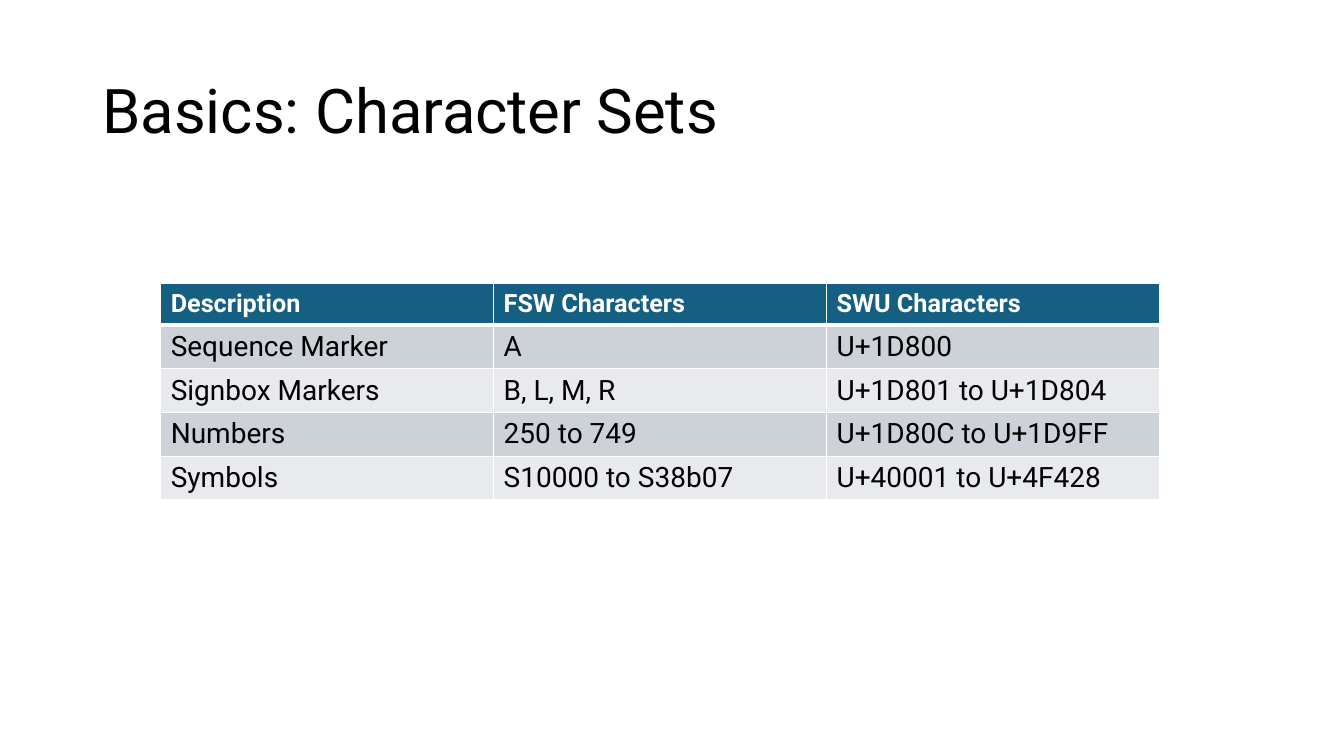
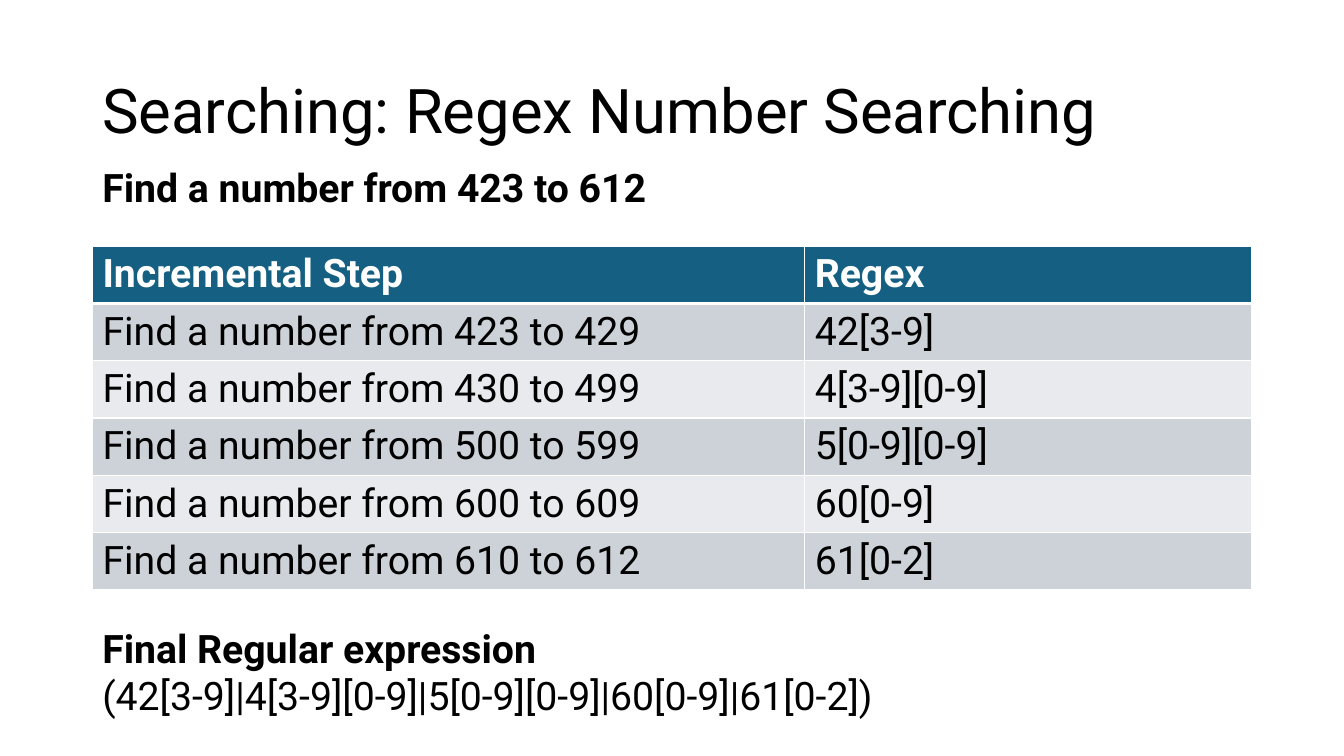
from lxml import etree
from pptx import Presentation
from pptx import util as u
from pptx.dml.color import RGBColor
from pptx.enum import text
from pptx.oxml.ns import qn

LEFT, WIDE = 2.33, 29.21
HEAD = "156082"
BANDS = "CCD2D8", "E8EAED"
WHITE, BLACK = "FFFFFF", "000000"
ROW = 1.04


def tint(code):
    return RGBColor.from_string(code)


def edge(cell, side, width):
    """Draw one white border; call before the cell gets its fill."""
    line = etree.SubElement(cell._tc.get_or_add_tcPr(), qn("a:ln" + side),
                            w=str(u.Pt(width)))
    fill = etree.SubElement(line, qn("a:solidFill"))
    etree.SubElement(fill, qn("a:srgbClr"), val=WHITE)


class Deck:
    base = {"name": "Roboto", "size": u.Pt(28), "bold": False}

    def __init__(self):
        self.prs = Presentation()
        self.prs.slide_width = u.Cm(33.87)
        self.prs.slide_height = u.Cm(19.05)

    def slide(self, title):
        self.page = self.prs.slides.add_slide(self.prs.slide_layouts[6])
        frame = self.note((LEFT, 1.02, WIDE, 3.68), [(title, False)], size=u.Pt(44))
        frame.vertical_anchor = text.MSO_ANCHOR.MIDDLE
        frame.paragraphs[0].line_spacing = 0.9

    def label(self, para, words, color=BLACK, **style):
        run = para.add_run()
        run.text = words
        for key, value in {**self.base, **style}.items():
            setattr(run.font, key, value)
        run.font.color.rgb = tint(color)

    def note(self, box, lines, **style):
        """Add a text box; each line is its words and whether they are bold."""
        frame = self.page.shapes.add_textbox(*map(u.Cm, box)).text_frame
        frame.word_wrap = True
        for i, (words, bold) in enumerate(lines):
            para = frame.add_paragraph() if i else frame.paragraphs[0]
            self.label(para, words, bold=bold, **style)
        return frame

    def table(self, left, top, cols, rows, head, body):
        """Add a banded table; head and body are text sizes in points."""
        grid = self.page.shapes.add_table(
            len(rows), len(cols), u.Cm(left), u.Cm(top),
            u.Cm(sum(cols)), u.Cm(ROW * len(rows))).table
        for col, width in zip(grid.columns, cols):
            col.width = u.Cm(width)
        for r, row in enumerate(rows):
            grid.rows[r].height = u.Cm(ROW)
            for c, words in enumerate(row):
                self.cell(grid.cell(r, c), r, words, body if r else head)

    def cell(self, cell, r, words, size):
        rule = {"L": 1, "R": 1, "T": 3 if r == 1 else 1, "B": 1 if r else 3}
        for side, width in rule.items():
            edge(cell, side, width)
        cell.fill.solid()
        cell.fill.fore_color.rgb = tint(BANDS[(r - 1) % 2] if r else HEAD)
        if r:
            cell.vertical_anchor = text.MSO_ANCHOR.MIDDLE
        self.label(cell.text_frame.paragraphs[0], words, BLACK if r else WHITE,
                   size=u.Pt(size), bold=not r)


def main():
    deck = Deck()

    deck.slide("Basics: Character Sets")
    deck.table(4.05, 7.15, [8.39] * 3, [
        ("Description", "FSW Characters", "SWU Characters"),
        ("Sequence Marker", "A", "U+1D800"),
        ("Signbox Markers", "B, L, M, R", "U+1D801 to U+1D804"),
        ("Numbers", "250 to 749", "U+1D80C to U+1D9FF"),
        ("Symbols", "S10000 to S38b07", "U+40001 to U+4F428"),
    ], head=18, body=20)

    deck.slide("Searching: Regex Number Searching")
    steps = [
        (423, 429, "42[3-9]"),
        (430, 499, "4[3-9][0-9]"),
        (500, 599, "5[0-9][0-9]"),
        (600, 609, "60[0-9]"),
        (610, 612, "61[0-2]"),
    ]
    find = "Find a number from {} to {}".format
    rows = [(find(low, high), regex) for low, high, regex in steps]
    deck.table(LEFT, 6.21, [17.95, 11.26],
               [("Incremental Step", "Regex")] + rows, head=28, body=28)
    deck.note((LEFT, 3.98, 16.94, 1.45), [(find(423, 612), True)])
    union = "|".join(regex for _, regex in rows)
    deck.note((LEFT, 15.6, 27.4, 2.65),
              [("Final Regular expression", True), (f"({union})", False)])

    deck.prs.save("out.pptx")


if __name__ == "__main__":
    main()
